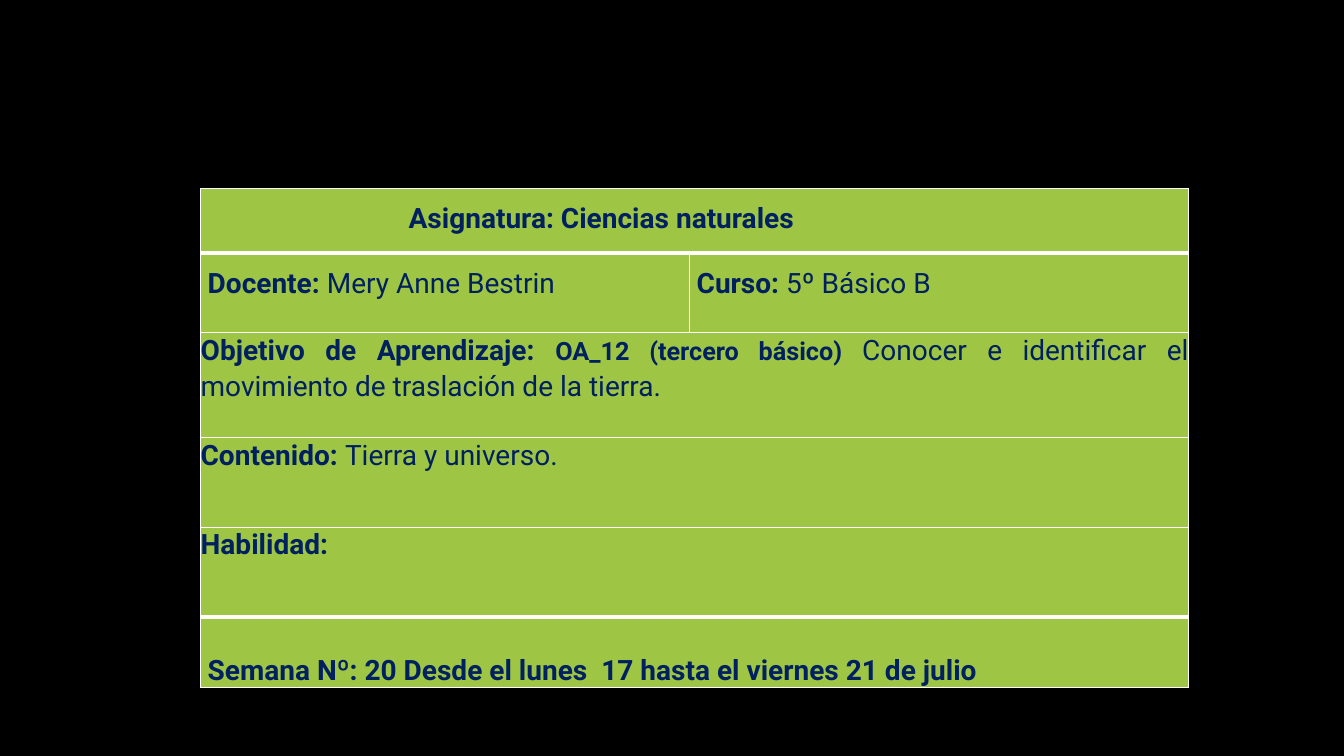
from lxml import etree
from pptx import Presentation
from pptx.dml.color import RGBColor
from pptx.enum.text import PP_ALIGN
from pptx.oxml.ns import qn
from pptx.util import Inches, Pt

LEFT, MID, JUST = PP_ALIGN.LEFT, PP_ALIGN.CENTER, PP_ALIGN.JUSTIFY
BLACK = RGBColor(0, 0, 0)
WHITE = RGBColor(0xFF, 0xFF, 0xFF)
GREEN = RGBColor(0x9E, 0xC5, 0x44)
NAVY = RGBColor(0x00, 0x20, 0x60)
FONT = "Roboto"
LINE = 16.9
FIXED = Pt(LINE)
DROP = LINE / 72
PAD = 0.07

COLS = [4.85, 4.95]
ROWS = [0.64, 0.79, 1.04, 0.89, 0.89, 0.7]
EDGES = [1, 3, 1, 1, 1, 3, 1]

# row, column, alignment, spacing, margins (left, top, right), runs (text, size, bold)
CELLS = [
    (0, 0, MID, FIXED, (0, DROP, 1.85),
     [("Asignatura: Ciencias naturales", 20, True)]),
    (1, 0, LEFT, FIXED, (PAD, 2 * DROP - DROP, 0),
     [("Docente: ", 20, True), ("Mery Anne Bestrin", 20, False)]),
    (1, 1, LEFT, FIXED, (PAD, DROP, 0),
     [("Curso: ", 20, True), ("5º Básico B", 20, False)]),
    (2, 0, JUST, 1.07, (0, 0, 0),
     [("Objetivo de Aprendizaje: ", 20, True),
      ("OA_12 (tercero básico) ", 18, True),
      ("Conocer e identificar el movimiento de traslación de la tierra.",
       20, False)]),
    (3, 0, LEFT, 1.05, (0, 0, 0),
     [("Contenido: ", 20, True), ("Tierra y universo.", 20, False)]),
    (4, 0, LEFT, 1.05, (0, 0, 0), [("Habilidad:", 20, True)]),
    (5, 0, LEFT, FIXED, (PAD, 2 * DROP, 0),
     [("Semana Nº: 20 Desde el lunes  17 hasta el viernes 21 de julio",
       20, True)]),
]


def add_edges(cell, row):
    props = cell._tc.get_or_add_tcPr()
    widths = {"L": 1, "R": 1, "T": EDGES[row], "B": EDGES[row + 1]}
    for side, width in widths.items():
        line = etree.SubElement(props, qn(f"a:ln{side}"), w=str(Pt(width)))
        fill = etree.SubElement(line, qn("a:solidFill"))
        etree.SubElement(fill, qn("a:srgbClr"), val=str(WHITE))


def fill_cell(cell, align, space, pads, runs):
    cell.margin_left, cell.margin_top, cell.margin_right = map(Inches, pads)
    para = cell.text_frame.paragraphs[0]
    para.alignment = align
    para.line_spacing = space
    for text, size, bold in runs:
        run = para.add_run()
        run.text = text
        font = run.font
        font.name, font.size, font.bold = FONT, Pt(size), bold
        font.color.rgb = NAVY


def main():
    deck = Presentation()
    deck.slide_width, deck.slide_height = Inches(13.33), Inches(7.5)
    slide = deck.slides.add_slide(deck.slide_layouts[6])
    back = slide.background.fill
    back.solid()
    back.fore_color.rgb = BLACK

    table = slide.shapes.add_table(
        len(ROWS), len(COLS), Inches(1.99), Inches(1.87),
        Inches(sum(COLS)), Inches(sum(ROWS))).table
    table.first_row = table.horz_banding = False
    for col, width in zip(table.columns, COLS):
        col.width = Inches(width)
    for i, height in enumerate(ROWS):
        table.rows[i].height = Inches(height)
        for j in range(len(COLS)):
            cell = table.cell(i, j)
            cell.margin_left = cell.margin_right = 0
            cell.margin_top = cell.margin_bottom = 0
            add_edges(cell, i)
            cell.fill.solid()
            cell.fill.fore_color.rgb = GREEN
        if i != 1:
            table.cell(i, 0).merge(table.cell(i, 1))
    for row, col, *rest in CELLS:
        fill_cell(table.cell(row, col), *rest)
    deck.save("out.pptx")


if __name__ == "__main__":
    main()
